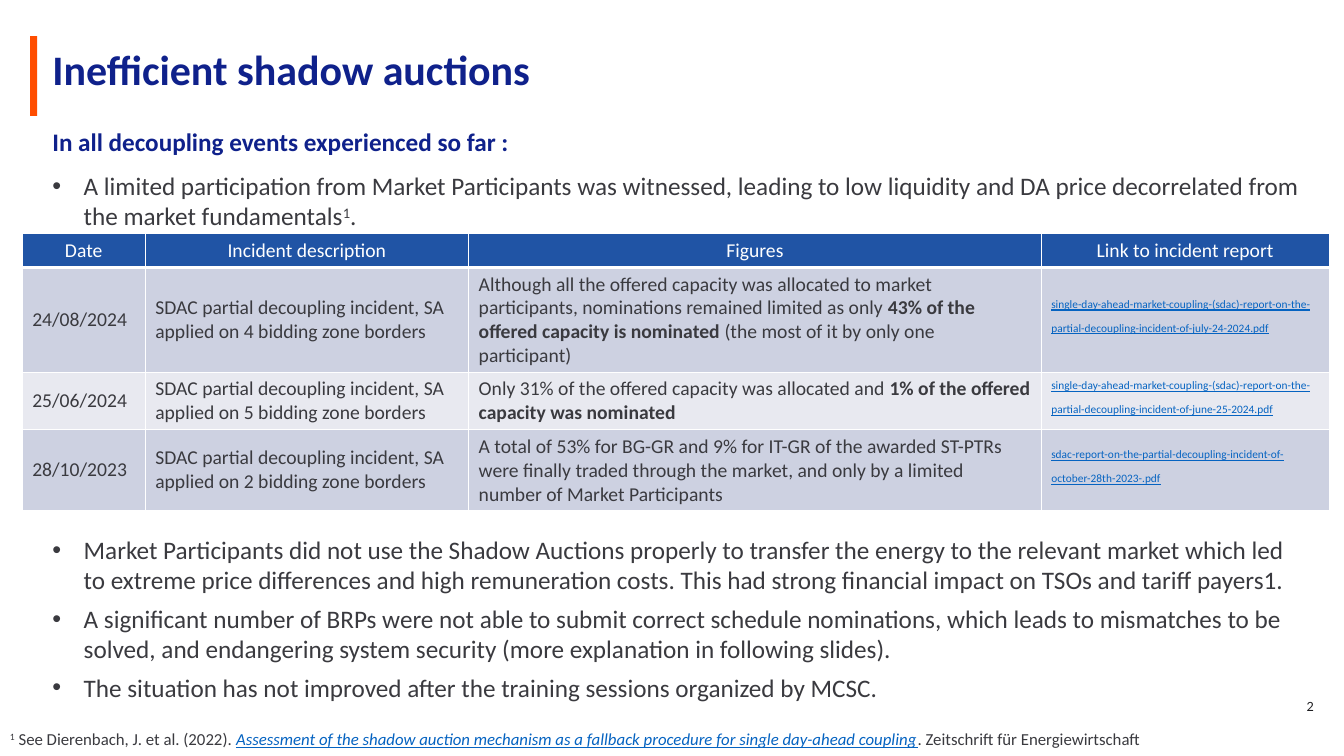
import dataclasses

import pptx
import pptx.dml.color
import pptx.enum.shapes
import pptx.enum.text
import pptx.oxml
import pptx.oxml.ns
import pptx.util

Cm = pptx.util.Cm
Pt = pptx.util.Pt
RGBColor = pptx.dml.color.RGBColor
Align = pptx.enum.text.PP_ALIGN
Anchor = pptx.enum.text.MSO_ANCHOR

NAVY = RGBColor(0x0F, 0x21, 0x8B)
BLUE = RGBColor(0x20, 0x54, 0xA5)
ORANGE = RGBColor(0xFF, 0x4D, 0x00)
INK = RGBColor(0x3A, 0x3A, 0x3F)
BLACK = RGBColor(0x1D, 0x1D, 0x20)
LINK = RGBColor(0x05, 0x63, 0xC1)
WHITE = RGBColor(0xFF, 0xFF, 0xFF)
BANDS = (RGBColor(0xCD, 0xD1, 0xE1), RGBColor(0xE8, 0xE9, 0xF0))


@dataclasses.dataclass(frozen=True)
class Span:
    text: str
    color: RGBColor = INK
    bold: bool = False
    italic: bool = False
    underline: bool = False
    raised: bool = False


@dataclasses.dataclass(frozen=True)
class Para:
    spans: tuple[Span, ...]
    bullet: bool = False
    formats: dict = dataclasses.field(default_factory=dict)


@dataclasses.dataclass(frozen=True)
class TextArea:
    left: float
    top: float
    width: float
    height: float
    size: float
    paras: tuple[Para, ...]
    font: str = "Calibri"
    anchor: Anchor = Anchor.TOP


@dataclasses.dataclass(frozen=True)
class Incident:
    date: str
    description: str
    figures: tuple[Span, ...]
    report: str


def bullet(*spans: Span) -> Para:
    return Para(spans, True, {"space_after": Pt(6)})


TEXT_AREAS = (
    TextArea(17.15, 17.32, 16.21, 1.02, 9,
             (Para((Span("2", BLACK),), formats={"alignment": Align.RIGHT, "line_spacing": Pt(9)}),),
             "Lato", Anchor.MIDDLE),
    TextArea(1.07, 1.3, 32.28, 0.99, 30,
             (Para((Span("Inefficient shadow auctions", NAVY, bold=True),),
                   formats={"line_spacing": Pt(32)}),), anchor=Anchor.MIDDLE),
    TextArea(1.07, 3.15, 32.26, 1.02, 18,
             (Para((Span("In all decoupling events experienced so far :", NAVY, bold=True),),
                   formats={"line_spacing": 0.9}),)),
    TextArea(1.07, 4.17, 32.08, 1.8, 18, (
        bullet(Span("A limited participation from Market Participants was witnessed, leading to low "
                    "liquidity and DA price decorrelated from the market fundamentals"),
               Span("1", raised=True), Span(".")),)),
    TextArea(1.07, 13.34, 32.08, 4.9, 18, (
        bullet(Span("Market Participants did not use the Shadow Auctions properly to transfer the energy "
                    "to the relevant market which led to extreme price differences and high remuneration "
                    "costs. This had strong financial impact on TSOs and tariff payers1.")),
        bullet(Span("A significant number of BRPs were not able to submit correct schedule nominations, "
                    "which leads to mismatches to be solved, and endangering system security (more "
                    "explanation in following slides).")),
        bullet(Span("The situation has not improved after the training sessions organized by MCSC.")))),
    TextArea(0, 18.24, 32.72, 1.12, 12, (
        Para((Span("1", raised=True), Span(" See Dierenbach, J. et al. (2022). "),
              Span("Assessment of the shadow auction mechanism as a fallback procedure for single "
                   "day-ahead coupling", LINK, italic=True, underline=True),
              Span(". Zeitschrift für Energiewirtschaft"))),)),
)

HEADERS = ("Date", "Incident description", "Figures", "Link to incident report")
COLUMN_WIDTHS = (3.1, 8.15, 14.43, 7.26)
ROW_HEIGHTS = (0.84, 2.64, 1.45, 2.03)
INCIDENTS = (
    Incident("24/08/2024", "SDAC partial decoupling incident, SA applied on 4 bidding zone borders",
             (Span("Although all the offered capacity was allocated to market participants, "
                   "nominations remained limited as only "),
              Span("43% of the offered capacity is nominated ", bold=True),
              Span("(the most of it by only one participant)")),
             "single-day-ahead-market-coupling-(sdac)-report-on-the-partial-decoupling-incident-of-july-24-2024.pdf"),
    Incident("25/06/2024", "SDAC partial decoupling incident, SA applied on 5 bidding zone borders",
             (Span("Only 31% of the offered capacity was allocated and "),
              Span("1% of the offered capacity was nominated", bold=True)),
             "single-day-ahead-market-coupling-(sdac)-report-on-the-partial-decoupling-incident-of-june-25-2024.pdf"),
    Incident("28/10/2023", "SDAC partial decoupling incident, SA applied on 2 bidding zone borders",
             (Span("A total of 53% for BG-GR and 9% for IT-GR of the awarded ST-PTRs were finally traded "
                   "through the market, and only by a limited number of Market Participants"),),
             "sdac-report-on-the-partial-decoupling-incident-of-october-28th-2023-.pdf"),
)


def parse_xml(markup: str):
    return pptx.oxml.parse_xml(markup.replace(" ", f" {pptx.oxml.ns.nsdecls('a')} ", 1))


def write_para(paragraph, para: Para, size: float, font: str = "Calibri") -> None:
    if para.bullet:
        properties = paragraph._p.get_or_add_pPr()
        properties.set("marL", str(Cm(0.79)))
        properties.set("indent", str(-Cm(0.79)))
        properties.append(parse_xml('<a:buFont typeface="Arial"/>'))
        properties.append(parse_xml('<a:buChar char="•"/>'))
    for name, value in para.formats.items():
        setattr(paragraph, name, value)
    for span in para.spans:
        run = paragraph.add_run()
        run.text = span.text
        formats = {"name": font, "size": Pt(size), "bold": span.bold,
                   "italic": span.italic, "underline": span.underline}
        for name, value in formats.items():
            setattr(run.font, name, value)
        run.font.color.rgb = span.color
        if span.raised:
            run._r.get_or_add_rPr().set("baseline", "30000")


def add_text_area(page, area: TextArea) -> None:
    box = page.shapes.add_textbox(Cm(area.left), Cm(area.top), Cm(area.width), Cm(area.height))
    frame = box.text_frame
    frame.word_wrap = True
    frame.vertical_anchor = area.anchor
    for index, para in enumerate(area.paras):
        paragraph = frame.add_paragraph() if index else frame.paragraphs[0]
        write_para(paragraph, para, area.size, area.font)


def fill_cell(cell, para: Para, color: RGBColor, bottom_line: float) -> None:
    for side, points in (("L", 1), ("R", 1), ("T", 1), ("B", bottom_line)):
        cell._tc.get_or_add_tcPr().append(parse_xml(
            f'<a:ln{side} w="{Pt(points)}"><a:solidFill><a:srgbClr val="{WHITE}"/></a:solidFill></a:ln{side}>'))
    cell.fill.solid()
    cell.fill.fore_color.rgb = color
    cell.vertical_anchor = Anchor.MIDDLE
    write_para(cell.text_frame.paragraphs[0], para, 14)


def add_incident_table(page) -> None:
    table = page.shapes.add_table(
        len(ROW_HEIGHTS), len(COLUMN_WIDTHS), Cm(0.56), Cm(5.89),
        Cm(sum(COLUMN_WIDTHS)), Cm(sum(ROW_HEIGHTS))).table
    for column, width in zip(table.columns, COLUMN_WIDTHS):
        column.width = Cm(width)
    for row, height in zip(table.rows, ROW_HEIGHTS):
        row.height = Cm(height)
    for index, header in enumerate(HEADERS):
        para = Para((Span(header, WHITE),), formats={"alignment": Align.CENTER})
        fill_cell(table.cell(0, index), para, BLUE, 3)
    for number, incident in enumerate(INCIDENTS):
        contents = ((Span(incident.date),), (Span(incident.description),), incident.figures,
                    (Span(incident.report, LINK, underline=True, raised=True),))
        for index, spans in enumerate(contents):
            fill_cell(table.cell(number + 1, index), Para(spans), BANDS[number % 2], 1)


def add_title_accent(page) -> None:
    accent = page.shapes.add_shape(
        pptx.enum.shapes.MSO_SHAPE.RECTANGLE, Cm(0.76), Cm(0.91), Cm(0.18), Cm(2.01))
    accent.shadow.inherit = False
    accent.fill.solid()
    accent.fill.fore_color.rgb = ORANGE
    accent.line.fill.background()


def main() -> None:
    deck = pptx.Presentation()
    deck.slide_width, deck.slide_height = Cm(33.87), Cm(19.05)
    page = deck.slides.add_slide(deck.slide_layouts[6])
    add_title_accent(page)
    for area in TEXT_AREAS:
        add_text_area(page, area)
    add_incident_table(page)
    deck.save("out.pptx")


if __name__ == "__main__":
    main()
